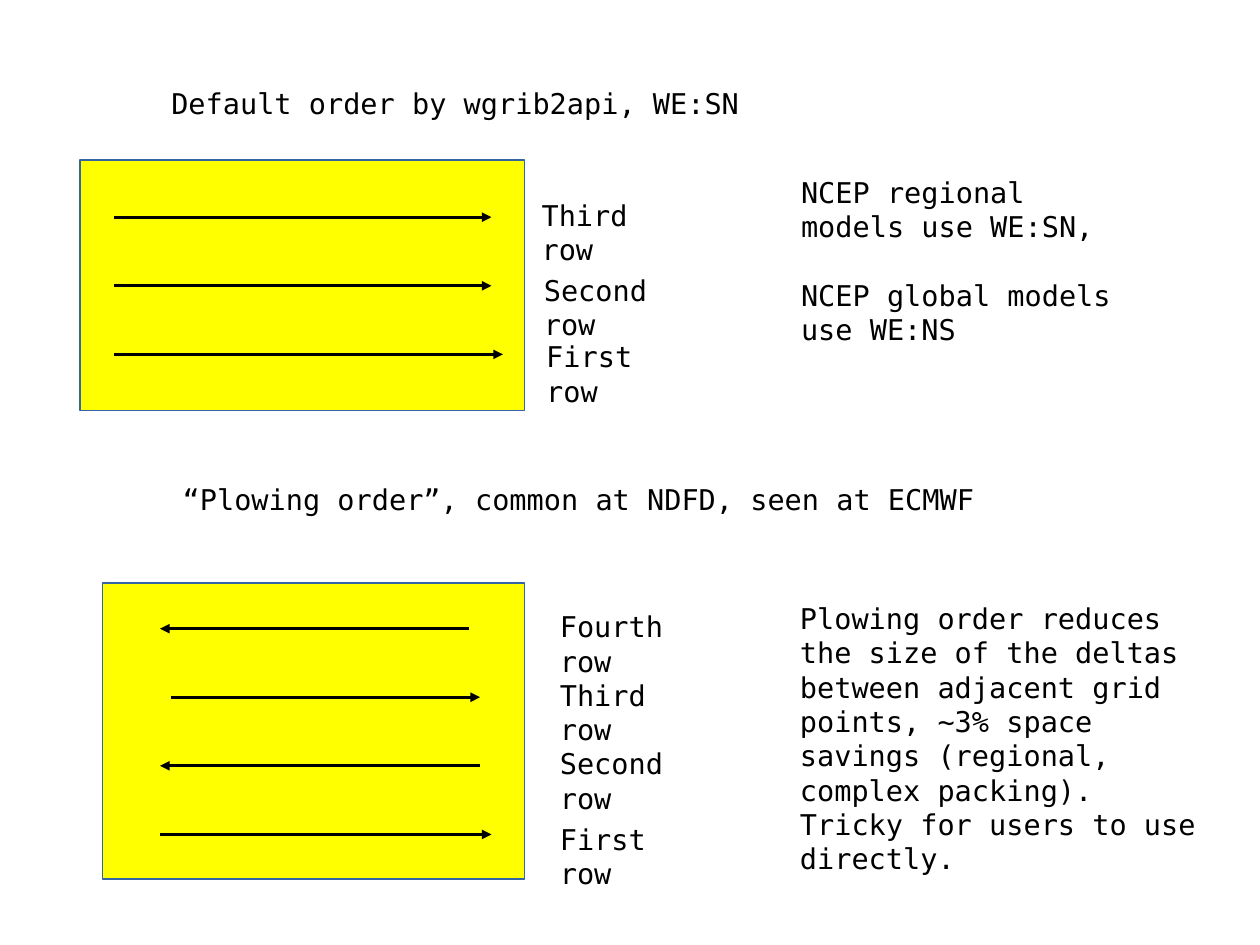
from lxml.etree import SubElement
from pptx import Presentation
from pptx.dml.color import RGBColor
from pptx.enum.shapes import MSO_CONNECTOR, MSO_SHAPE
from pptx.enum.text import MSO_ANCHOR
from pptx.oxml.ns import qn
from pptx.util import Pt

BLACK = RGBColor(0x00, 0x00, 0x00)
YELLOW = RGBColor(0xFF, 0xFF, 0x00)
BLUE = RGBColor(0x34, 0x65, 0xA4)

TEXT_HEIGHT = 27.36
ROW_STEP = 43.2
SHORT_LABEL, LONG_LABEL = 110.9, 121.6


class GridOrderSlide:
    font_name = "DejaVu Sans Mono"
    font_size = 18
    hairline = 0

    def __init__(self, slide):
        self.slide = slide

    def grid(self, left, top, width, height):
        shape = self.slide.shapes.add_shape(
            MSO_SHAPE.RECTANGLE, Pt(left), Pt(top), Pt(width), Pt(height))
        shape.shadow.inherit = False
        shape.fill.solid()
        shape.fill.fore_color.rgb = YELLOW
        shape.line.color.rgb = BLUE
        shape.line.width = Pt(self.hairline)

    def arrow(self, start, end, y):
        connector = self.slide.shapes.add_connector(
            MSO_CONNECTOR.STRAIGHT, Pt(start), Pt(y), Pt(end), Pt(y))
        connector.line.color.rgb = BLACK
        connector.line.width = Pt(self.hairline)
        SubElement(connector.line._get_or_add_ln(), qn("a:tailEnd"), type="triangle")
        SubElement(connector._element.spPr, qn("a:effectLst"))

    def text(self, left, top, width, height, *lines, gap_after_first=0):
        box = self.slide.shapes.add_textbox(Pt(left), Pt(top), Pt(width), Pt(height))
        frame = box.text_frame
        frame.word_wrap = True
        frame.vertical_anchor = MSO_ANCHOR.TOP
        frame.margin_left = frame.margin_right = Pt(7.2)
        frame.margin_top = frame.margin_bottom = Pt(3.6)
        for index, line in enumerate(lines):
            paragraph = frame.add_paragraph() if index else frame.paragraphs[0]
            if index == 1:
                paragraph.space_before = Pt(gap_after_first)
            run = paragraph.add_run()
            run.text = line
            run.font.name = self.font_name
            run.font.size = Pt(self.font_size)
            run.font.color.rgb = BLACK

    def rows(self, first_y, rows):
        """Stack rows upwards, each with its arrow and its label."""
        for index, (start, end, label, left, top, width) in enumerate(rows):
            self.arrow(start, end, first_y - index * ROW_STEP)
            self.text(left, top, width, TEXT_HEIGHT, label)


def main():
    presentation = Presentation()
    presentation.slide_width = Pt(793.7)
    presentation.slide_height = Pt(595.28)
    page = GridOrderSlide(presentation.slides.add_slide(presentation.slide_layouts[6]))

    page.grid(50.4, 100.8, 280, 157.7)
    page.text(100.8, 50.4, 445.7, TEXT_HEIGHT, "Default order by wgrib2api, WE:SN")
    page.rows(223.2, [
        (72, 316.8, "First row", 337, 210.2, SHORT_LABEL),
        (72, 309.6, "Second row", 335.5, 168.5, LONG_LABEL),
        (72, 309.6, "Third row", 334.1, 121, SHORT_LABEL),
    ])
    page.text(497.5, 106.6, 229.6, 90, "NCEP regional models use WE:SN,",
              "NCEP global models", "use WE:NS", gap_after_first=21.6)

    page.grid(64.8, 367.2, 265.7, 186.5)
    page.text(108, 300.2, 554.4, TEXT_HEIGHT,
              "“Plowing order”, common at NDFD, seen at ECMWF")
    page.rows(525.6, [
        (100.8, 309.6, "First row", 345.6, 514.1, SHORT_LABEL),
        (302.4, 100.8, "Second row", 345.6, 466.6, LONG_LABEL),
        (108, 302.4, "Third row", 345.6, 423.4, SHORT_LABEL),
        (295.2, 100.8, "Fourth row", 345.6, 380.2, LONG_LABEL),
    ])
    page.text(496.8, 375.1, 272.9, 194.4,
              "Plowing order reduces the size of the deltas between adjacent grid "
              "points, ~3% space savings (regional, complex packing). "
              "Tricky for users to use directly.")

    presentation.save("out.pptx")


if __name__ == "__main__":
    main()
